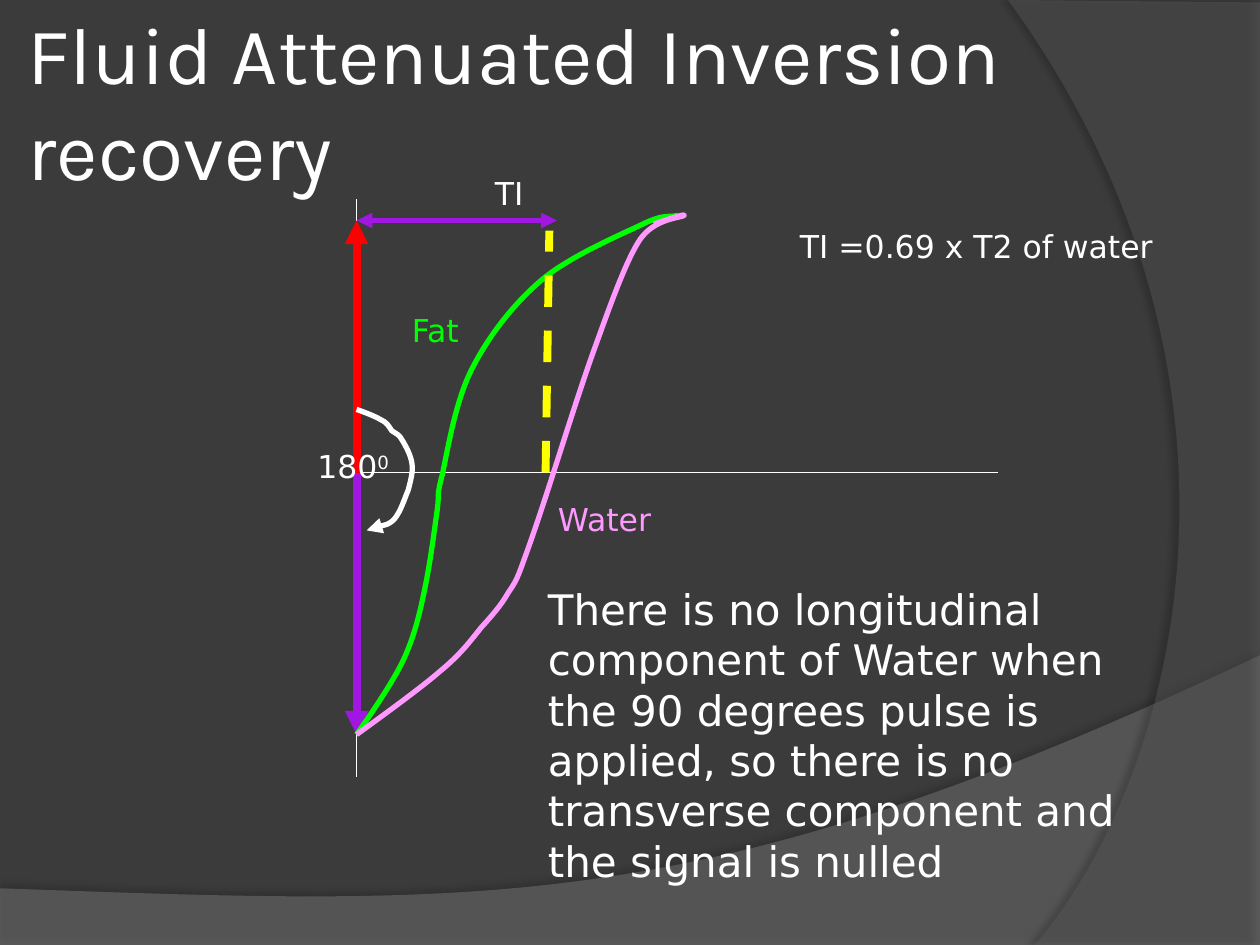
"""Build the slide on fluid attenuated inversion recovery."""
from lxml.etree import SubElement as Sub
from pptx import Presentation
from pptx.dml.color import RGBColor
from pptx.enum.dml import MSO_LINE
from pptx.enum.shapes import MSO_CONNECTOR
from pptx.enum.text import MSO_ANCHOR, MSO_AUTO_SIZE, PP_ALIGN
from pptx.oxml.ns import qn
from pptx.util import Inches, Pt

WHITE = RGBColor(0xFF, 0xFF, 0xFF)
RED = RGBColor(0xFF, 0x00, 0x00)
PURPLE = RGBColor(0xA1, 0x16, 0xE0)
GREEN = RGBColor(0x00, 0xFF, 0x00)
PINK = RGBColor(0xFF, 0x99, 0xFF)
YELLOW = RGBColor(0xFF, 0xFF, 0x00)
BLACK = RGBColor(0x00, 0x00, 0x00)
BACK = RGBColor(0x3B, 0x3B, 0x3B)
LIGHT = RGBColor(0x7F, 0x7F, 0x7F)
DIM = RGBColor(0x5E, 0x5E, 0x5E)

TITLE = "Fluid Attenuated Inversion recovery"
NOTE = ("There is no longitudinal component of Water when the 90 degrees pulse is applied, "
        "so there is no transverse component and the signal is nulled")
X0, Y0 = 2.83, 3.75

WAVES = [
    (3, [(0, 7.05), (0, 7.51), (10, 7.51), (10, 5.2), (5.59, 7.29), (3.91, 7.19), (0, 7.05)],
     LIGHT, 45, (35, 4, 3.5, 270)),
    (2, [(10, 0.02), (10, 7.5), (8.21, 7.5), (9.35, 6.19), (10.18, 3), (8, 0)],
     DIM, 40, (45, 4, 4, 180)),
]
FAT = [
    (X0, 5.83), (2.9, 5.73), (3.12, 5.42), (3.21, 5.22), (3.3, 5.02), (3.34, 4.83), (3.38, 4.63),
    (3.42, 4.43), (3.45, 4.19), (3.47, 4.05), (3.49, 3.9), (3.46, 3.96), (3.51, 3.77),
    (3.55, 3.59), (3.61, 3.2), (3.74, 2.94), (3.87, 2.68), (4.06, 2.43), (4.29, 2.23),
    (4.51, 2.04), (4.91, 1.87), (5.1, 1.78), (5.28, 1.69), (5.32, 1.73), (5.38, 1.71),
]
WATER = [
    (X0, 5.83), (2.94, 5.75), (3.33, 5.47), (3.49, 5.33), (3.66, 5.19), (3.73, 5.09), (3.82, 4.98),
    (3.91, 4.88), (3.98, 4.8), (4.03, 4.71), (4.09, 4.62), (4.1, 4.61), (4.16, 4.44),
    (4.22, 4.28), (4.31, 4.01), (4.4, 3.73), (4.49, 3.45), (4.6, 3.1), (4.71, 2.79),
    (4.82, 2.49), (4.96, 2.08), (5.08, 1.9), (5.2, 1.73), (5.41, 1.73), (5.43, 1.71),
    (5.45, 1.69), (5.24, 1.76), (5.19, 1.78),
]
FLIP = [
    (X0, 3.25), (2.86, 3.26), (2.97, 3.3), (3.02, 3.33), (3.07, 3.35), (3.09, 3.39), (3.11, 3.42),
    (3.14, 3.44), (3.17, 3.45), (3.19, 3.49), (3.22, 3.54), (3.26, 3.61), (3.27, 3.68),
    (3.28, 3.74), (3.26, 3.81), (3.24, 3.89), (3.21, 3.96), (3.18, 4.06), (3.13, 4.12),
    (3.08, 4.17), (2.96, 4.19), (2.91, 4.21),
]
CURVES = [(FAT, GREEN, ()), (WATER, PINK, ()), (FLIP, WHITE, ("tailEnd",))]
AXES = [
    ((X0, 1.58), (X0, 6.17), WHITE, 0.75, (), None),
    ((X0, Y0), (7.92, Y0), WHITE, 0.75, (), None),
    ((X0, Y0), (X0, 1.75), RED, 4.5, ("tailEnd",), None),
    ((X0, Y0), (X0, 5.83), PURPLE, 4.5, ("tailEnd",), None),
]
MARKS = [
    ((X0, 1.75), (4.42, 1.75), PURPLE, 3, ("headEnd", "tailEnd"), None),
    ((4.33, Y0), (4.36, 1.83), YELLOW, 4.5, (), MSO_LINE.DASH),
]
LABELS = [
    ("180", "0", (2.42, 3.5, 0.83, 0.4), 18, WHITE),
    ("TI", "", (3.83, 1.33, 0.75, 0.4), 18, WHITE),
    ("Fat", "", (3.17, 2.42, 0.75, 0.4), 18, GREEN),
    ("Water", "", (4.33, 3.92, 1.25, 0.4), 18, PINK),
    (NOTE, "", (4.25, 4.58, 4.92, 2.52), 24, WHITE),
    ("TI =0.69 x T2 of water", "", (6.25, 1.75, 3.42, 0.4), 18, WHITE),
]


def put(obj, **vals):
    for key, val in vals.items():
        setattr(obj, key, val)


def write(para, text, face, size, color):
    run = para.add_run()
    run.text = text
    put(run.font, name=face, size=Pt(size))
    run.font.color.rgb = color
    return run


def stroke(shape, color, width, ends, dash=None):
    line = shape.line
    line.color.rgb = color
    put(line, width=Pt(width), dash_style=dash)
    for end in ends:
        Sub(line._get_or_add_ln(), qn("a:" + end), type="triangle")


def draw(slide, points, flat=0, close=False):
    spots = [(Inches(x), Inches(y)) for x, y in points]
    maker = slide.shapes.build_freeform(*spots[0])
    maker.add_line_segments(spots[1:], close=close)
    shape = maker.convert_to_shape()
    shape.shadow.inherit = False
    steps = list(shape._element.iter(qn("a:lnTo")))[flat:]
    for i in range(0, len(steps), 3):
        bend = steps[i]
        bend.tag = qn("a:cubicBezTo")
        for step in steps[i + 1:i + 3]:
            bend.append(step[0])
            step.getparent().remove(step)
    return shape


def add_wave(slide, flat, points, color, alpha, shade):
    shape = draw(slide, points, flat, True)
    shape.fill.solid()
    shape.fill.fore_color.rgb = color
    shape.line.fill.background()
    props = shape._element.spPr
    tint = props.find(qn("a:solidFill"))[0]
    Sub(tint, qn("a:alpha"), val=str(alpha * 1000))
    dark, blur, dist, turn = shade
    glow = Sub(props.find(qn("a:effectLst")), qn("a:outerShdw"), blurRad=str(Pt(blur)),
               dist=str(Pt(dist)), dir=str(turn * 60000), algn="ctr", rotWithShape="0")
    ink = Sub(glow, qn("a:srgbClr"), val=str(BLACK))
    Sub(ink, qn("a:alpha"), val=str(dark * 1000))


def add_line(slide, start, end, color, width, ends, dash):
    spots = [Inches(v) for v in start + end]
    line = slide.shapes.add_connector(MSO_CONNECTOR.STRAIGHT, *spots)
    stroke(line, color, width, ends, dash)
    Sub(line._element.spPr, qn("a:effectLst"))


def add_label(slide, text, power, area, size, color):
    box = slide.shapes.add_textbox(*[Inches(v) for v in area])
    put(box.text_frame, word_wrap=True, auto_size=MSO_AUTO_SIZE.SHAPE_TO_FIT_TEXT)
    para = box.text_frame.paragraphs[0]
    write(para, text, "DejaVu Sans", size, color)
    if power:
        run = write(para, power, "DejaVu Sans", size, color)
        run.font._element.set("baseline", "30000")


def add_title(slide):
    title = slide.shapes.title
    put(title, left=Inches(0.17), top=Inches(0.17), width=Inches(9.67), height=Inches(1.25))
    frame, pad = title.text_frame, Inches(0.05)
    put(frame, word_wrap=True, auto_size=MSO_AUTO_SIZE.NONE, vertical_anchor=MSO_ANCHOR.MIDDLE,
        margin_left=pad, margin_right=pad, margin_top=pad, margin_bottom=pad)
    para = frame.paragraphs[0]
    para.alignment = PP_ALIGN.LEFT
    write(para, TITLE, "Karla", 46, WHITE)
    slide.shapes._spTree.append(title._element)


def main():
    deck = Presentation()
    put(deck, slide_width=Inches(10), slide_height=Inches(7.5))
    slide = deck.slides.add_slide(deck.slide_layouts[5])
    slide.background.fill.solid()
    slide.background.fill.fore_color.rgb = BACK
    for wave in WAVES:
        add_wave(slide, *wave)
    add_title(slide)
    for axis in AXES:
        add_line(slide, *axis)
    for points, color, ends in CURVES:
        curve = draw(slide, points)
        curve.fill.background()
        stroke(curve, color, 3, ends)
    for mark in MARKS:
        add_line(slide, *mark)
    for label in LABELS:
        add_label(slide, *label)
    deck.save("out.pptx")


if __name__ == "__main__":
    main()
